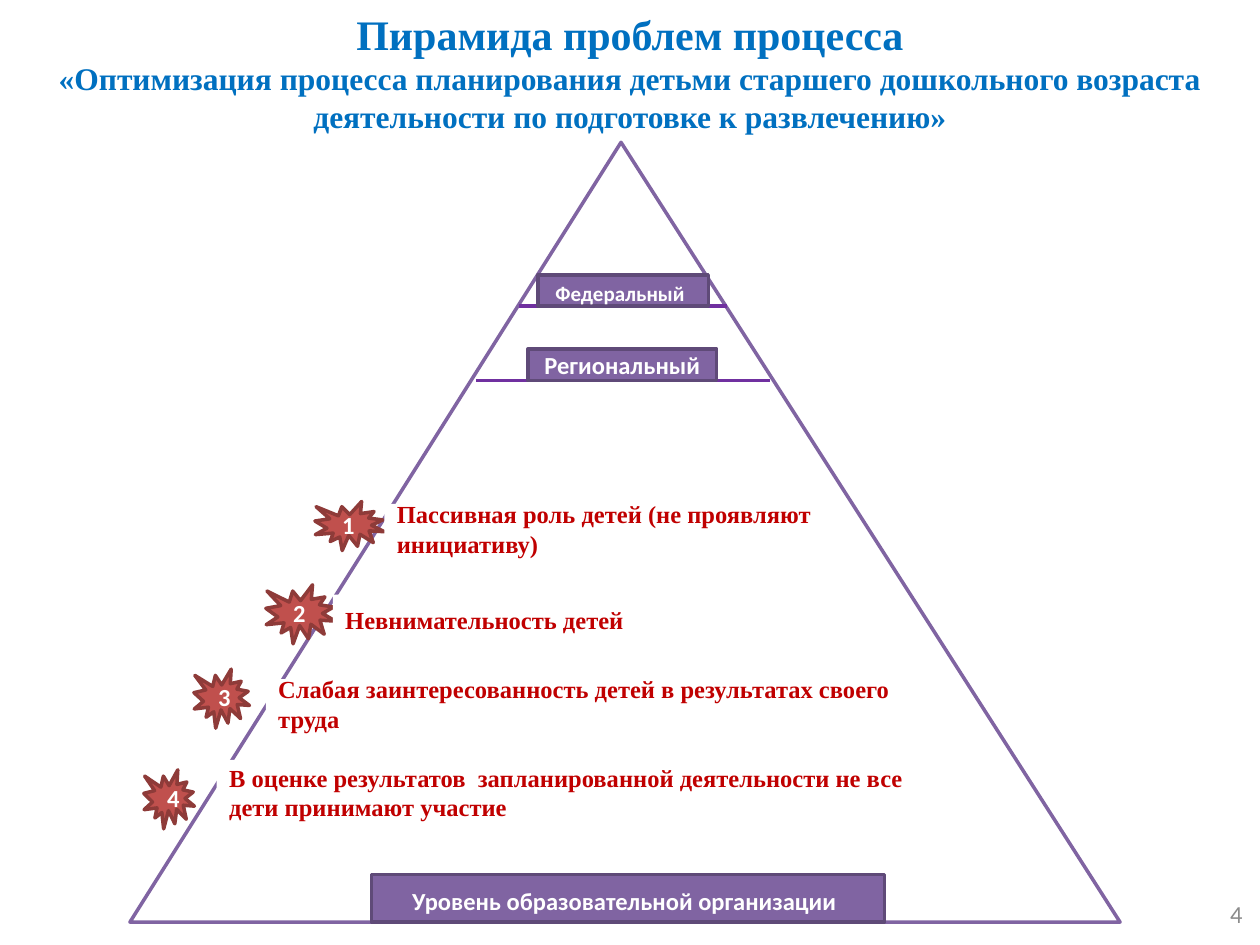
from pptx import Presentation
from pptx.dml.color import RGBColor
from pptx.enum.shapes import MSO_CONNECTOR as CONN, MSO_SHAPE as SHAPE
from pptx.enum.text import MSO_ANCHOR as ANCHOR, PP_ALIGN as ALIGN
from pptx.oxml.ns import qn
from pptx.util import Cm, Pt
from lxml import etree

SERIF, SANS = "Times New Roman", "Calibri"
WHITE, BLUE, RED, GREY = "FFFFFF", "0070C0", "C00000", "8C8C8C"
PURPLE, DARK_PURPLE, VIOLET = "8064A2", "5F4A78", "7030A0"
BRICK, DARK_BRICK = "C0504D", "8E3B39"

# Level plates: left, top, width, height, text, text size, size of closing space
LEVELS = [
    (10.85, 5.54, 3.43, 0.63, "Федеральный", 12, 16),
    (10.64, 7.04, 3.81, 0.63, "Региональный", 14, None),
    (7.49, 17.63, 10.34, 0.96, "Уровень образовательной организации", 14, 18),
]
# Level dividers: left, right, y
DIVIDERS = [(10.46, 14.66, 6.17), (9.6, 15.52, 7.67)]
# Problems: badge box, label box, text
PROBLEMS = [
    ((6.35, 10.11, 1.4, 0.99), (7.75, 10.16, 9.35, 0.99),
     "Пассивная роль детей (не проявляют инициативу)"),
    ((5.36, 11.79, 1.4, 1.19), (6.71, 11.99, 10.8, 0.99),
     "Невнимательность детей"),
    ((3.91, 13.49, 1.12, 1.19), (5.36, 13.69, 13.34, 0.99),
     "Слабая заинтересованность детей в результатах своего труда"),
    ((2.9, 15.52, 1.02, 1.19), (4.37, 15.32, 15.14, 1.3),
     "В оценке результатов  запланированной деятельности не все дети принимают участие"),
]


def color(hex_code):
    return RGBColor.from_string(hex_code)


def write(p, text, size, font, hex_code, bold=True, align=ALIGN.LEFT):
    p.alignment = align
    f = p.font
    f.name, f.size, f.bold = font, Pt(size), bold
    f.color.rgb = color(hex_code)
    p.add_run().text = text


def add_text_box(s, box):
    tf = s.shapes.add_textbox(*map(Cm, box)).text_frame
    tf.word_wrap = True
    tf.vertical_anchor = ANCHOR.MIDDLE
    return tf


def add_figure(s, kind, box, fill, line=None):
    sp = s.shapes.add_shape(kind, *map(Cm, box))
    sp.shadow.inherit = False
    sp.fill.solid()
    sp.fill.fore_color.rgb = color(fill)
    if line:
        sp.line.color.rgb = color(line)
        sp.line.width = Pt(2)
    else:
        sp.line.fill.background()
    sp.text_frame.vertical_anchor = ANCHOR.MIDDLE
    return sp


def add_divider(s, left, right, y):
    cn = s.shapes.add_connector(CONN.STRAIGHT, Cm(left), Cm(y), Cm(right), Cm(y))
    cn.line.color.rgb = color(VIOLET)
    cn.line.width = Pt(2)
    etree.SubElement(cn._element.spPr, qn("a:effectLst"))


def add_level(s, left, top, width, height, text, size, space_size):
    sp = add_figure(s, SHAPE.RECTANGLE, (left, top, width, height), PURPLE, DARK_PURPLE)
    p = sp.text_frame.paragraphs[0]
    write(p, text, size, SANS, WHITE, align=ALIGN.CENTER)
    if space_size:
        r = p.add_run()
        r.text = " "
        r.font.size = Pt(space_size)


def add_problem(s, number, badge_box, label_box, text):
    badge = add_figure(s, SHAPE.EXPLOSION1, badge_box, BRICK, DARK_BRICK)
    write(badge.text_frame.paragraphs[0], str(number), 14, SANS, WHITE)
    label = add_figure(s, SHAPE.RECTANGLE, label_box, WHITE)
    write(label.text_frame.paragraphs[0], text, 14, SERIF, RED)


def main():
    prs = Presentation()
    prs.slide_width, prs.slide_height = Cm(25.4), Cm(19.05)
    s = prs.slides.add_slide(prs.slide_layouts[6])

    # Title
    tf = add_text_box(s, (0, 0.1, 25.4, 2.7))
    write(tf.paragraphs[0], "Пирамида проблем процесса", 24, SERIF, BLUE,
          align=ALIGN.CENTER)
    write(tf.add_paragraph(),
          "«Оптимизация процесса планирования детьми старшего дошкольного возраста "
          "деятельности по подготовке к развлечению»",
          18, SERIF, BLUE, align=ALIGN.CENTER)

    # Slide number
    tf = add_text_box(s, (19.38, 17.91, 5.92, 1.02))
    write(tf.paragraphs[0], "4", 14, SANS, GREY, bold=False, align=ALIGN.RIGHT)

    # Pyramid with its levels
    pyramid = add_figure(s, SHAPE.ISOSCELES_TRIANGLE, (2.62, 2.87, 19.96, 15.72),
                         WHITE, PURPLE)
    pyramid.adjustments[0] = 0.496
    for divider in DIVIDERS:
        add_divider(s, *divider)
    for level in LEVELS:
        add_level(s, *level)

    # Numbered problems
    for number, problem in enumerate(PROBLEMS, 1):
        add_problem(s, number, *problem)

    prs.save("out.pptx")


if __name__ == "__main__":
    main()
